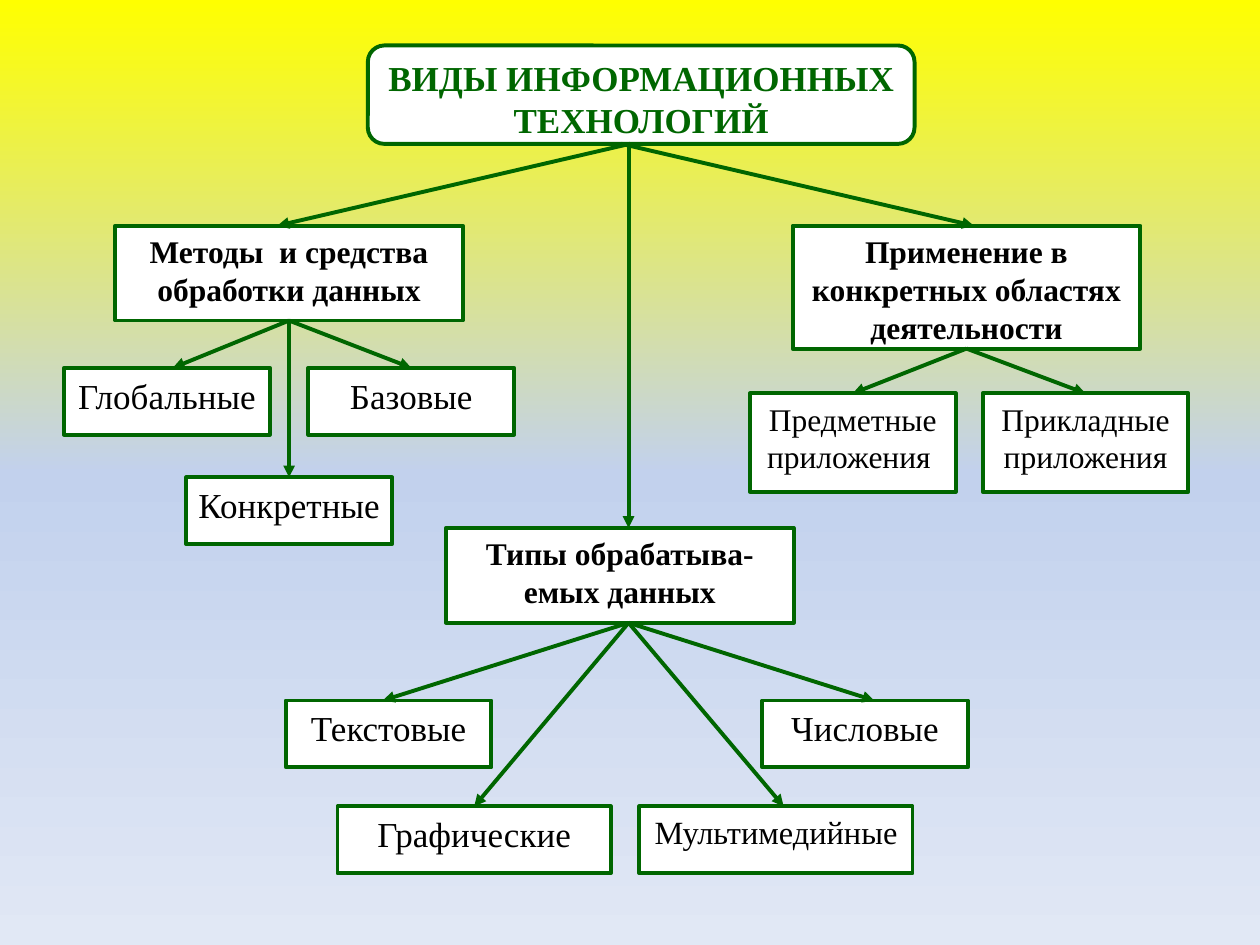
import copy
from dataclasses import dataclass
from typing import NamedTuple

import pptx
import pptx.dml.color
import pptx.enum.shapes
import pptx.enum.text
import pptx.oxml
import pptx.oxml.ns
import pptx.util

Pt = pptx.util.Pt
SHAPES = pptx.enum.shapes.MSO_SHAPE


@dataclass(frozen=True)
class Theme:
    """Colours, font and type sizes of the diagram."""
    font: str = "Times New Roman"
    green: str = "006600"
    black: str = "000000"
    white: str = "FFFFFF"
    sky: tuple = (("FFFF00", 0), ("C2D1ED", 0.5), ("E1E8F5", 1))
    large: float = 20
    medium: float = 18.5
    small: float = 18
    stroke: float = 2.25
    snap: float = 2.5


THEME = Theme()


class Box(NamedTuple):
    """A rectangle in points."""
    left: float
    top: float
    width: float
    height: float

    @property
    def middle(self):
        """Return the horizontal middle."""
        return self.left + self.width / 2


def rgb(value):
    """Return a colour from its hex digits."""
    return pptx.dml.color.RGBColor.from_string(value)


def write(frame, text, *, size, color=THEME.black, bold=False, after=10):
    """Write one centred paragraph into a text frame."""
    frame.word_wrap = True
    frame.vertical_anchor = pptx.enum.text.MSO_ANCHOR.TOP
    frame.margin_left = frame.margin_right = Pt(6)
    paragraph = frame.paragraphs[0]
    paragraph.alignment = pptx.enum.text.PP_ALIGN.CENTER
    paragraph.space_after = Pt(after)
    paragraph.line_spacing = 1.0
    run = paragraph.add_run()
    run.text = text
    run.font.name = THEME.font
    run.font.size = Pt(size)
    run.font.bold = bold
    run.font.color.rgb = rgb(color)


def add_node(slide, box, text, kind=SHAPES.RECTANGLE, **style):
    """Add a white outlined node with its caption."""
    node = slide.shapes.add_shape(kind, *(Pt(length) for length in box))
    node.shadow.inherit = False
    node.fill.solid()
    node.fill.fore_color.rgb = rgb(THEME.white)
    node.line.color.rgb = rgb(THEME.green)
    node.line.width = Pt(THEME.stroke)
    write(node.text_frame, text, **style)
    return node


def add_arrow(slide, source, start, target, end):
    """Draw an arrow between two nodes, joined where it meets a side's middle."""
    arrow = slide.shapes.add_connector(
        pptx.enum.shapes.MSO_CONNECTOR.STRAIGHT,
        Pt(start), source.top + source.height, Pt(end), target.top)
    for node, x, join, site in ((source, start, arrow.begin_connect, 2),
                                (target, end, arrow.end_connect, 0)):
        if abs(node.left + node.width / 2 - Pt(x)) <= Pt(THEME.snap):
            join(node, site)
    arrow.line.color.rgb = rgb(THEME.green)
    arrow.line.width = Pt(THEME.stroke)
    namespace = pptx.oxml.ns.nsdecls("a")
    outline = arrow.element.find(".//" + pptx.oxml.ns.qn("a:ln"))
    outline.append(pptx.oxml.parse_xml(f'<a:tailEnd {namespace} type="triangle"/>'))
    arrow.element.spPr.append(pptx.oxml.parse_xml(f"<a:effectLst {namespace}/>"))


def add_branch(slide, box, heading, height, leaves, trunk, shift=0):
    """Place a heading at the top of the box and fan arrows out to its leaves."""
    width = 198.7
    heading_box = Box(box.middle - width / 2 + shift, box.top, width, height)
    head = add_node(slide, heading_box, heading, size=THEME.small, bold=True)
    start = box.middle + trunk
    for text, (x, y, leaf_width, leaf_height), size, spread in leaves:
        leaf_box = Box(box.left + x, box.top + y, leaf_width, leaf_height)
        leaf = add_node(slide, leaf_box, text, size=size)
        add_arrow(slide, head, start, leaf, start + spread)
    return head


def add_methods(slide, box):
    """Place the branch of processing methods."""
    width, height = 117.6, 38.2
    row, last = 81.2, box.height - height
    leaves = (
        ("Глобальные", (0, row, width, height), THEME.large, -68.4),
        ("Базовые", (box.width - width, row, width, height), THEME.large, 68.4),
        ("Конкретные", ((box.width - width) / 2, last, width, height),
         THEME.large, 0),
    )
    return add_branch(slide, box, "Методы  и средства обработки данных", 54.2,
                      leaves, trunk=2)


def add_applications(slide, box):
    """Place the branch of application areas."""
    width, height = 117.6, 56.2
    row = box.height - height
    leaves = (
        ("Предметные приложения ", (0, row, width, height), THEME.small, -65.5),
        ("Прикладные приложения", (box.width - width, row, width, height),
         THEME.small, 65.5),
    )
    return add_branch(slide, box, "Применение в конкретных областях деятельности",
                      70.2, leaves, trunk=-0.7, shift=-1.5)


def add_data_types(slide, box):
    """Place the branch of data types."""
    narrow, wide, height = 117.4, 156.2, 38.2
    row, last, indent = 98.6, box.height - height, 29.5
    leaves = (
        ("Текстовые", (0, row, narrow, height), THEME.large, -140.4),
        ("Числовые", (box.width - narrow, row, narrow, height),
         THEME.large, 140.4),
        ("Графические", (indent, last, wide, height), THEME.large, -88.6),
        ("Мультимедийные", (box.width - indent - wide - 2, last, wide, height),
         THEME.medium, 88.6),
    )
    return add_branch(slide, box, "Типы обрабатыва-емых данных", 54.2, leaves,
                      trunk=1, shift=-4)


def add_root(slide, box, branches):
    """Place the title node and its arrows to the branch headings."""
    root = add_node(slide, box, "ВИДЫ ИНФОРМАЦИОННЫХ ТЕХНОЛОГИЙ",
                    SHAPES.ROUNDED_RECTANGLE, size=THEME.large,
                    color=THEME.green, bold=True, after=0)
    for heading, start, end in branches:
        add_arrow(slide, root, start, heading, end)


def paint_background(slide):
    """Fill the background with the vertical three-stop gradient."""
    fill = slide.background.fill
    fill.gradient()
    fill.gradient_angle = 270
    stops = slide.element.find(".//" + pptx.oxml.ns.qn("a:gsLst"))
    stops.append(copy.deepcopy(stops[-1]))
    for stop, (color, position) in zip(fill.gradient_stops, THEME.sky):
        stop.color.rgb = rgb(color)
        stop.position = position


def main():
    """Build and save the diagram of information technologies."""
    deck = pptx.Presentation()
    deck.slide_width, deck.slide_height = Pt(720), Pt(540)
    slide = deck.slides.add_slide(deck.slide_layouts[6])
    paint_background(slide)
    methods = add_methods(slide, Box(36.6, 129, 257.2, 182))
    applications = add_applications(slide, Box(428.5, 129, 250.6, 152))
    data_types = add_data_types(slide, Box(163.4, 301.7, 389.6, 197.3))
    add_root(slide, Box(210.2, 26, 312.4, 56.2),
             ((methods, 360, 158.5), (applications, 355, 556.5),
              (data_types, 359.2, 359.2)))
    deck.save("out.pptx")


if __name__ == "__main__":
    main()
